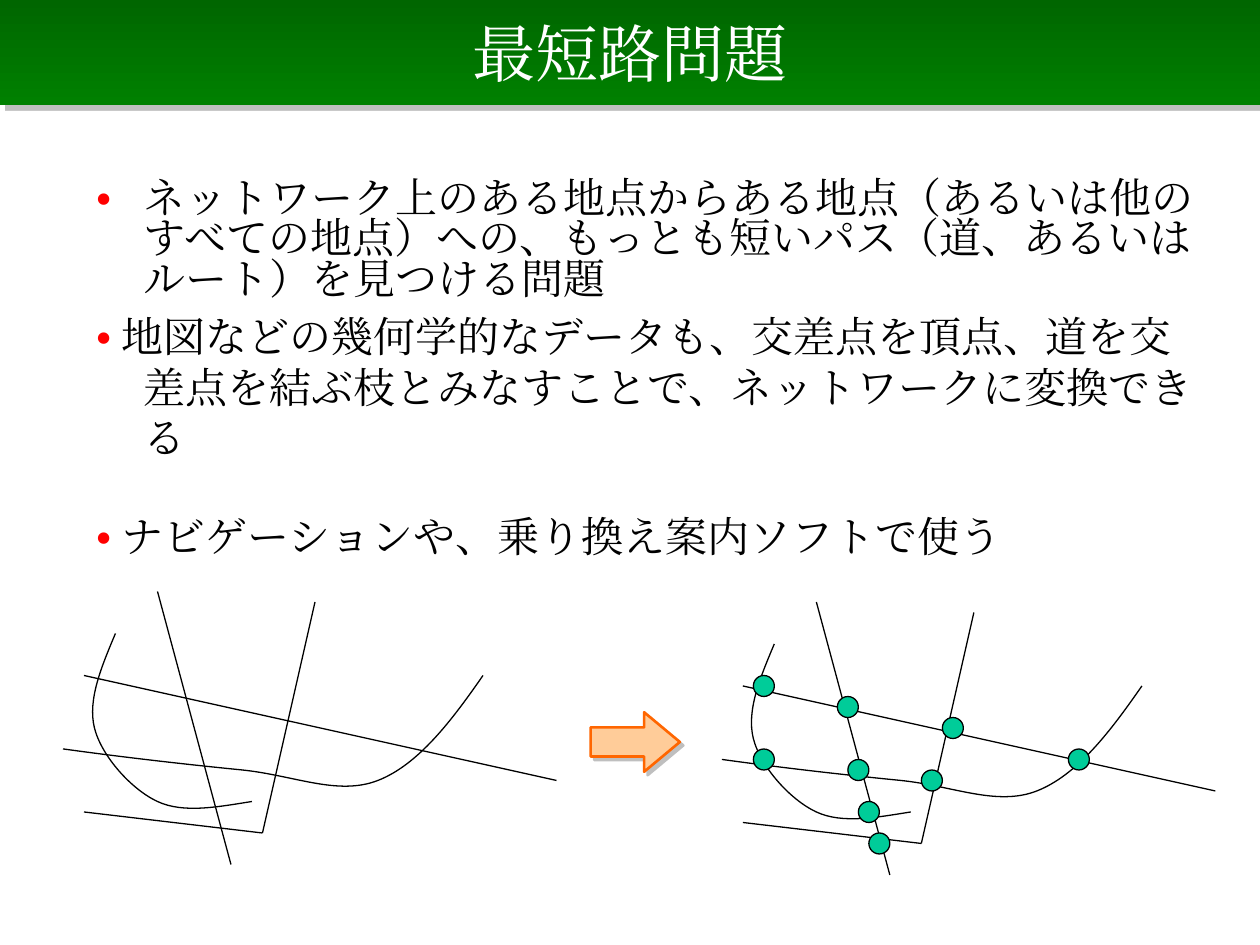
from lxml.etree import SubElement
from pptx import Presentation
from pptx.dml.color import RGBColor
from pptx.enum.lang import MSO_LANGUAGE_ID as Language
from pptx.enum.shapes import MSO_CONNECTOR as Connector, MSO_SHAPE as Shape
from pptx.enum.text import MSO_ANCHOR as Anchor, PP_ALIGN as Align
from pptx.oxml.ns import qn
from pptx.util import Pt

COLORS = {
    "title_top": "006600", "title_bottom": "008000", "title_text": "FFFFFF",
    "text": "000000", "bullet": "FF0000", "road": "000000", "node": "00CC99",
    "arrow": "FFCC99", "arrow_edge": "FF6600", "shadow": "808080",
}

# Gap after the bullet, sentence, line spacing, space before
BULLETS = [
    ("\t", "ネットワーク上のある地点からある地点（あるいは他のすべての地点）への、"
           "もっとも短いパス（道、あるいはルート）を見つける問題", 0.8, 5),
    (" ", "地図などの幾何学的なデータも、交差点を頂点、道を交差点を結ぶ枝とみなすことで、"
          "ネットワークに変換できる", 1.0, 5),
    (" ", "ナビゲーションや、乗り換え案内ソフトで使う", 0.8, 33),
]

STRAIGHT_ROADS = [
    ((90, 338), (132, 494)),
    ((48, 386), (318, 446)),
    ((48, 464), (150, 476)),
    ((150, 476), (180, 344)),
]
# Start point, then three Bezier points for each section
CURVED_ROADS = [
    [(276, 386), (258, 412), (239, 437), (216, 446), (193, 455), (168, 443),
     (138, 440), (108, 437), (72, 433), (36, 428)],
    [(66, 362), (58, 381), (50, 400), (54, 416), (58, 432), (75, 451),
     (90, 458), (105, 465), (125, 461), (144, 458)],
]
CROSSINGS = [(108, 398), (60, 428), (60, 386), (120, 458), (156, 440),
             (168, 410), (240, 428), (114, 434), (126, 476)]
NETWORK_OFFSET = (376.5, 6)
NODE_SIZE = 12


def rgb(name):
    return RGBColor.from_string(COLORS[name])


class SlideBuilder:
    font = "Times New Roman"
    line_width = 0.75

    def __init__(self, slide):
        self.slide = slide
        self.shapes = slide.shapes

    def start_group(self):
        """Put the following roads and nodes into a new group."""
        self.shapes = self.slide.shapes.add_group_shape().shapes

    def run(self, paragraph, text, size, color, bold=False):
        run = paragraph.add_run()
        run.text = text
        font = run.font
        font.name, font.size, font.bold = self.font, Pt(size), bold
        font.color.rgb = rgb(color)
        font.language_id = Language.JAPANESE
        SubElement(font._element, qn("a:ea"), typeface=self.font)

    def outline(self, shape, color="road", width=line_width):
        shape.line.color.rgb = rgb(color)
        shape.line.width = Pt(width)

    def drop_shadow(self, shape, distance):
        """Add a half-transparent shadow to the lower right."""
        shape.shadow.inherit = False
        effects = shape._element.spPr.find(qn("a:effectLst"))
        shadow = SubElement(effects, qn("a:outerShdw"), dist=str(Pt(distance)),
                            dir="2700000", algn="ctr", rotWithShape="0")
        color = SubElement(shadow, qn("a:srgbClr"), val=COLORS["shadow"])
        SubElement(color, qn("a:alpha"), val="50000")

    def title(self, text, width, height):
        bar = self.slide.shapes.add_shape(Shape.RECTANGLE, 0, 0, Pt(width), Pt(height))
        bar.line.fill.background()
        bar.fill.gradient()
        bar.fill.gradient_angle = 270
        for stop, color in zip(bar.fill.gradient_stops, ("title_top", "title_bottom")):
            stop.color.rgb = rgb(color)
        self.drop_shadow(bar, 4.2)
        bar.text_frame.vertical_anchor = Anchor.MIDDLE
        paragraph = bar.text_frame.paragraphs[0]
        paragraph.alignment = Align.CENTER
        self.run(paragraph, text, 36, "title_text")

    def bullets(self, items, left, top, width, height):
        box = self.slide.shapes.add_textbox(Pt(left), Pt(top), Pt(width), Pt(height))
        frame = box.text_frame
        frame.word_wrap = True
        for index, (gap, text, spacing, before) in enumerate(items):
            paragraph = frame.add_paragraph() if index else frame.paragraphs[0]
            paragraph.line_spacing = spacing
            paragraph.space_before = Pt(before)
            properties = paragraph._p.get_or_add_pPr()
            properties.set("marL", str(Pt(27)))
            properties.set("indent", str(-Pt(27)))
            self.run(paragraph, "•", 24, "bullet", bold=True)
            self.run(paragraph, gap + text, 24, "text")

    def line(self, start, end):
        points = [Pt(value) for value in (*start, *end)]
        line = self.shapes.add_connector(Connector.STRAIGHT, *points)
        self.outline(line)
        SubElement(line._element.spPr, qn("a:effectLst"))

    def curve(self, points):
        """Draw an outline whose segments are turned into Bezier sections."""
        start, *others = [(Pt(x), Pt(y)) for x, y in points]
        builder = self.shapes.build_freeform(*start)
        builder.add_line_segments(others, close=False)
        curve = builder.convert_to_shape()
        curve.fill.background()
        curve.shadow.inherit = False
        self.outline(curve)
        segments = list(curve._element.iter(qn("a:lnTo")))
        outline_path = segments[0].getparent()
        for first in range(0, len(segments), 3):
            section = SubElement(outline_path, qn("a:cubicBezTo"))
            for segment in segments[first:first + 3]:
                section.append(segment[0])
                outline_path.remove(segment)

    def node(self, x, y):
        half = NODE_SIZE / 2
        node = self.shapes.add_shape(Shape.OVAL, Pt(x - half), Pt(y - half),
                                     Pt(NODE_SIZE), Pt(NODE_SIZE))
        node.shadow.inherit = False
        node.fill.solid()
        node.fill.fore_color.rgb = rgb("node")
        self.outline(node)

    def arrow(self, left, top, width, height):
        arrow = self.slide.shapes.add_shape(Shape.RIGHT_ARROW, Pt(left), Pt(top),
                                            Pt(width), Pt(height))
        arrow.adjustments[0], arrow.adjustments[1] = 0.49, 0.6
        arrow.fill.solid()
        arrow.fill.fore_color.rgb = rgb("arrow")
        self.outline(arrow, "arrow_edge", 1.5)
        self.drop_shadow(arrow, 2.8)

    def road_map(self, offset=(0, 0), crossings=()):
        def moved(points):
            return [(x + offset[0], y + offset[1]) for x, y in points]

        self.start_group()
        for road in STRAIGHT_ROADS:
            self.line(*moved(road))
        for road in CURVED_ROADS:
            self.curve(moved(road))
        for center in moved(crossings):
            self.node(*center)


def main():
    presentation = Presentation()
    presentation.slide_width, presentation.slide_height = Pt(720), Pt(540)
    slide = presentation.slides.add_slide(presentation.slide_layouts[6])
    builder = SlideBuilder(slide)
    builder.title("最短路問題", 720, 60)
    builder.bullets(BULLETS, 48, 100, 646.5, 212.5)
    builder.road_map()
    builder.road_map(NETWORK_OFFSET, CROSSINGS)
    builder.arrow(337.5, 407, 51, 34)
    presentation.save("out.pptx")


if __name__ == "__main__":
    main()
